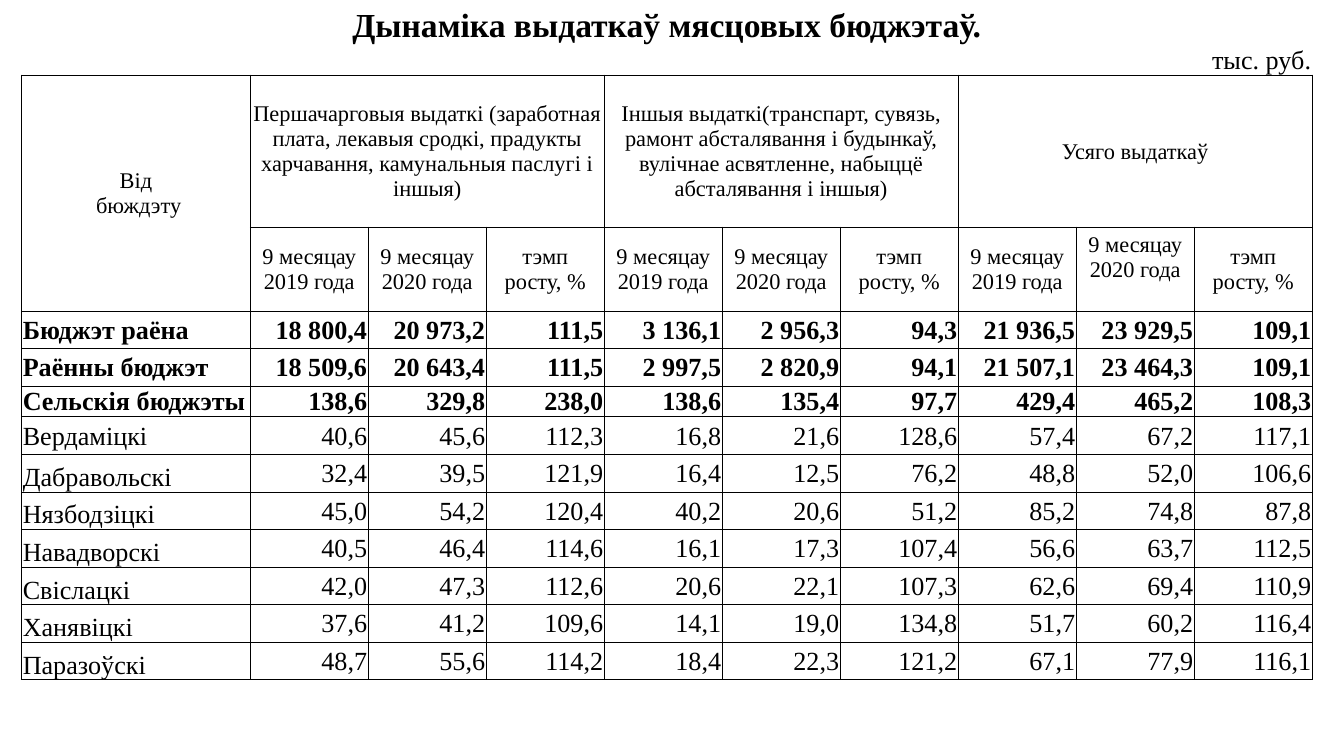
import lxml.etree
import pptx
import pptx.dml.color
import pptx.enum.text
import pptx.oxml.ns
import pptx.util

Cm = pptx.util.Cm
Pt = pptx.util.Pt
ALIGN = pptx.enum.text.PP_ALIGN
ANCHOR = pptx.enum.text.MSO_ANCHOR
qn = pptx.oxml.ns.qn
BLACK = pptx.dml.color.RGBColor(0, 0, 0)
FONT = "Times New Roman"

GROUPS = [
    "Першачарговыя выдаткі (заработная плата, лекавыя сродкі, прадукты харчавання, камунальныя паслугі і іншыя)",
    "Іншыя выдаткі(транспарт, сувязь, рамонт абсталявання і будынкаў, вулічнае асвятленне, набыццё абсталявання і іншыя)",
    "Усяго выдаткаў",
]
PERIODS = ["9 месяцау 2019 года", "9 месяцау 2020 года", "тэмп\nросту, %"]
BUDGETS = [
    ("Бюджэт раёна", "18 800,4|20 973,2|111,5|3 136,1|2 956,3|94,3|21 936,5|23 929,5|109,1"),
    ("Раённы бюджэт", "18 509,6|20 643,4|111,5|2 997,5|2 820,9|94,1|21 507,1|23 464,3|109,1"),
    ("Сельскія бюджэты", "138,6|329,8|238,0|138,6|135,4|97,7|429,4|465,2|108,3"),
    ("Вердаміцкі", "40,6|45,6|112,3|16,8|21,6|128,6|57,4|67,2|117,1"),
    ("Дабравольскі", "32,4|39,5|121,9|16,4|12,5|76,2|48,8|52,0|106,6"),
    ("Нязбодзіцкі", "45,0|54,2|120,4|40,2|20,6|51,2|85,2|74,8|87,8"),
    ("Навадворскі", "40,5|46,4|114,6|16,1|17,3|107,4|56,6|63,7|112,5"),
    ("Свіслацкі", "42,0|47,3|112,6|20,6|22,1|107,3|62,6|69,4|110,9"),
    ("Ханявіцкі", "37,6|41,2|109,6|14,1|19,0|134,8|51,7|60,2|116,4"),
    ("Паразоўскі", "48,7|55,6|114,2|18,4|22,3|121,2|67,1|77,9|116,1"),
]
COL_WIDTHS = [4.32] + [2.23] * 9
ROW_HEIGHTS = [0.76, 0.58, 2.87, 1.59, 0.71, 0.71, 0.58] + [0.71] * 7


def set_border(cell, side, visible):
    ln = lxml.etree.SubElement(cell._tc.get_or_add_tcPr(), qn("a:" + side), w=str(Pt(0.5)))
    if visible:
        fill = lxml.etree.SubElement(ln, qn("a:solidFill"))
        lxml.etree.SubElement(fill, qn("a:srgbClr"), val=str(BLACK))
    else:
        lxml.etree.SubElement(ln, qn("a:noFill"))


def write(cell, text, size, align, bold=False, anchor=ANCHOR.MIDDLE):
    cell.vertical_anchor = anchor
    tf = cell.text_frame
    for i, line in enumerate(text.split("\n")):
        p = tf.add_paragraph() if i else tf.paragraphs[0]
        p.alignment = align
        r = p.add_run()
        r.text = line
        r.font.name = FONT
        r.font.size = Pt(size)
        r.font.bold = bold
        r.font.color.rgb = BLACK


prs = pptx.Presentation()
prs.slide_width = Cm(25.4)
prs.slide_height = Cm(14.29)
s = prs.slides.add_slide(prs.slide_layouts[6])

table = s.shapes.add_table(
    len(ROW_HEIGHTS), len(COL_WIDTHS), Cm(0.41), Cm(0.08),
    Cm(sum(COL_WIDTHS)), Cm(sum(ROW_HEIGHTS)),
).table
table.first_row = False
table.horz_banding = False
for column, width in zip(table.columns, COL_WIDTHS):
    column.width = Cm(width)
for row, height in zip(table.rows, ROW_HEIGHTS):
    row.height = Cm(height)

for row in range(len(ROW_HEIGHTS)):
    for col in range(len(COL_WIDTHS)):
        cell = table.cell(row, col)
        cell.margin_left = cell.margin_right = cell.margin_top = Cm(0.02)
        cell.margin_bottom = 0
        for side in ("lnL", "lnR", "lnT", "lnB"):
            set_border(cell, side, row > 1 or (row == 1 and side == "lnB"))
        cell.fill.background()

table.cell(0, 0).merge(table.cell(0, 9))
write(table.cell(0, 0), "Дынаміка выдаткаў мясцовых бюджэтаў.", 18, ALIGN.CENTER, True, ANCHOR.BOTTOM)
for col in (1, 3, 5):
    table.cell(1, col).merge(table.cell(1, col + 1))
write(table.cell(1, 9), "тыс. руб.", 14, ALIGN.RIGHT, anchor=ANCHOR.BOTTOM)

table.cell(2, 0).merge(table.cell(3, 0))
write(table.cell(2, 0), "Від\n бюждэту", 12, ALIGN.CENTER)
for g, group in enumerate(GROUPS):
    first = 1 + 3 * g
    table.cell(2, first).merge(table.cell(2, first + 2))
    write(table.cell(2, first), group, 12, ALIGN.CENTER)
    for i, period in enumerate(PERIODS):
        write(table.cell(3, first + i), period, 12, ALIGN.CENTER)
table.cell(3, 1).text_frame.clear()
write(table.cell(3, 1), "9 месяцау\n2019 года", 12, ALIGN.CENTER)
table.cell(3, 8).margin_bottom = Cm(0.47)

for i, (name, values) in enumerate(BUDGETS):
    row = 4 + i
    bold = i < 3
    write(table.cell(row, 0), name, 14, ALIGN.LEFT, bold, ANCHOR.BOTTOM if i > 3 else ANCHOR.MIDDLE)
    for col, value in enumerate(values.split("|"), 1):
        write(table.cell(row, col), value, 14, ALIGN.RIGHT, bold)

for cell in table.iter_cells():
    p = cell.text_frame.paragraphs[0]
    if not p.runs:
        lxml.etree.SubElement(p._p, qn("a:endParaRPr"), sz="1000")

prs.save("out.pptx")
